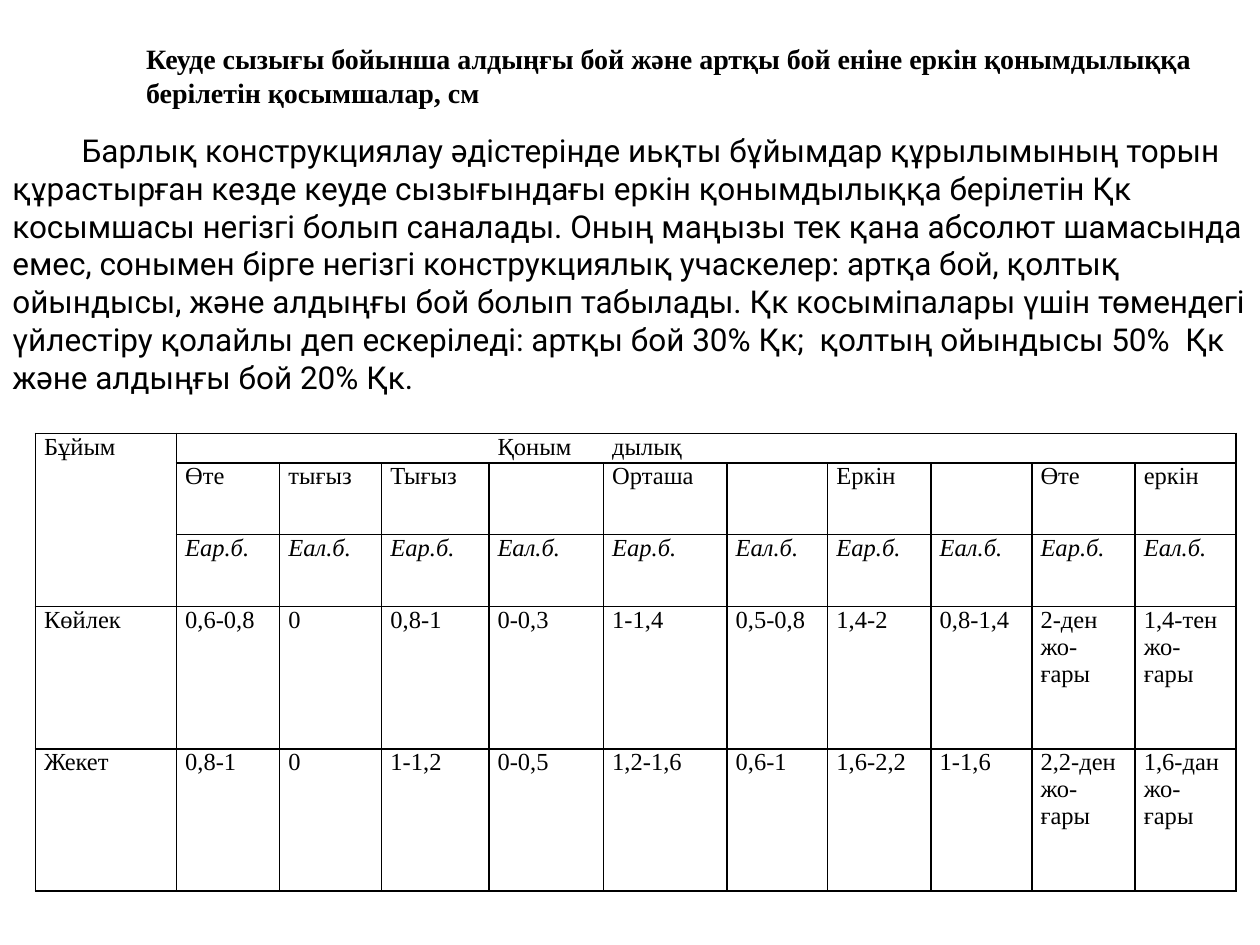
import pptx
import pptx.util
import pptx.dml.color
import pptx.enum.text
import pptx.oxml.ns
from lxml import etree

Inches = pptx.util.Inches
Pt = pptx.util.Pt
Align = pptx.enum.text.PP_ALIGN
BLACK = pptx.dml.color.RGBColor(0, 0, 0)
SERIF = "Times New Roman"
SANS = "Roboto"

TITLE = [
    "Кеуде сызығы бойынша алдыңғы бой және артқы бой еніне еркін қонымдылыққа",
    "берілетін қосымшалар, см",
]
BODY = (
    "Барлық конструкциялау әдістерінде иьқты бұйымдар құрылымының торын "
    "құрастырған кезде кеуде сызығындағы еркін қонымдылыққа берілетін Қк "
    "косымшасы негізгі болып саналады. Оның маңызы тек қана абсолют шамасында "
    "емес, сонымен бірге негізгі конструкциялық учаскелер: артқа бой, қолтық "
    "ойындысы, және алдыңғы бой болып табылады. Қк косыміпалары үшін төмендегі "
    "үйлестіру қолайлы деп ескеріледі: артқы бой 30% Қк;  қолтың ойындысы 50%  Қк "
    "және алдыңғы бой 20% Қк."
)
ROWS = [
    ["Бұйым", "", "", "", "Қоным", "дылық", "", "", "", "", ""],
    ["", "Өте ", "тығыз", "Тығыз", "", "Орташа", "", "Еркін", "", "Өте ", "еркін"],
    [""] + ["Еар.б.", "Еал.б."] * 5,
    ["Көйлек", "0,6-0,8", "0", "0,8-1", "0-0,3", "1-1,4", "0,5-0,8", "1,4-2",
     "0,8-1,4", "2-ден\nжо-ғары", "1,4-тен\nжо-\nғары"],
    ["Жекет", "0,8-1", "0", "1-1,2", "0-0,5", "1,2-1,6", "0,6-1", "1,6-2,2",
     "1-1,6", "2,2-ден\nжо-\nғары", "1,6-дан\nжо-\nғары"],
]
COLUMN_WIDTHS = [1.12, 0.82, 0.81, 0.85, 0.91, 0.98, 0.8, 0.82, 0.8, 0.82, 0.8]
ROW_HEIGHTS = [0.22, 0.57, 0.57, 1.13, 1.13]
HEADER_ROWS = 3


def write(frame, lines, size, font, bold=False, italic=False, align=Align.LEFT):
    for index, line in enumerate(lines):
        para = frame.paragraphs[0] if index == 0 else frame.add_paragraph()
        para.alignment = align
        if not line:
            end = etree.SubElement(para._p, pptx.oxml.ns.qn("a:endParaRPr"))
            end.set("sz", str(size * 100))
            continue
        span = para.add_run()
        span.text = line
        span.font.size = Pt(size)
        span.font.name = font
        span.font.bold = bold
        span.font.italic = italic
        span.font.color.rgb = BLACK


def set_borders(cell, shown):
    properties = cell._tc.get_or_add_tcPr()
    for side in "LRTB":
        line = etree.SubElement(properties, pptx.oxml.ns.qn(f"a:ln{side}"))
        line.set("w", str(Pt(1)))
        if side in shown:
            fill = etree.SubElement(line, pptx.oxml.ns.qn("a:solidFill"))
            color = etree.SubElement(fill, pptx.oxml.ns.qn("a:srgbClr"))
            color.set("val", str(BLACK))
        else:
            etree.SubElement(line, pptx.oxml.ns.qn("a:noFill"))


def visible_sides(row, column):
    last = len(COLUMN_WIDTHS) - 1
    if column == 0 and row < HEADER_ROWS:
        return "LR" + ("T" if row == 0 else "") + ("B" if row == HEADER_ROWS - 1 else "")
    if row == 0:
        return "TB" + ("L" if column == 1 else "") + ("R" if column == last else "")
    return "LRTB"


def add_title(page):
    title = page.shapes.title
    title.left, title.top = Inches(1.06), Inches(0.28)
    title.width, title.height = Inches(8.94), Inches(0.65)
    frame = title.text_frame
    frame.word_wrap = True
    frame.auto_size = pptx.enum.text.MSO_AUTO_SIZE.NONE
    frame.vertical_anchor = pptx.enum.text.MSO_ANCHOR.TOP
    write(frame, TITLE, 16, SERIF, bold=True)


def add_body(page):
    box = page.shapes.add_textbox(0, Inches(0.99), Inches(10), Inches(2.22))
    frame = box.text_frame
    frame.word_wrap = True
    write(frame, [BODY], 18, SANS)
    frame.paragraphs[0]._p.get_or_add_pPr().set("indent", str(Inches(0.55)))


def add_allowance_table(page):
    table = page.shapes.add_table(
        len(ROWS), len(COLUMN_WIDTHS), Inches(0.28), Inches(3.44),
        Inches(sum(COLUMN_WIDTHS)), Inches(sum(ROW_HEIGHTS))).table
    table.first_row = table.horz_banding = False
    for column, width in zip(table.columns, COLUMN_WIDTHS):
        column.width = Inches(width)
    for row, height in zip(table.rows, ROW_HEIGHTS):
        row.height = Inches(height)
    for row, texts in enumerate(ROWS):
        for column, text in enumerate(texts):
            cell = table.cell(row, column)
            cell.margin_left = cell.margin_right = Inches(0.07)
            cell.margin_top = cell.margin_bottom = 0
            set_borders(cell, visible_sides(row, column))
            cell.fill.background()
            write(cell.text_frame, text.split("\n"), 14, SERIF,
                  italic=row == HEADER_ROWS - 1, align=Align.JUSTIFY)


def main():
    deck = pptx.Presentation()
    deck.slide_width, deck.slide_height = Inches(10), Inches(7.5)
    page = deck.slides.add_slide(deck.slide_layouts[5])
    add_title(page)
    add_body(page)
    add_allowance_table(page)
    deck.save("out.pptx")


if __name__ == "__main__":
    main()
